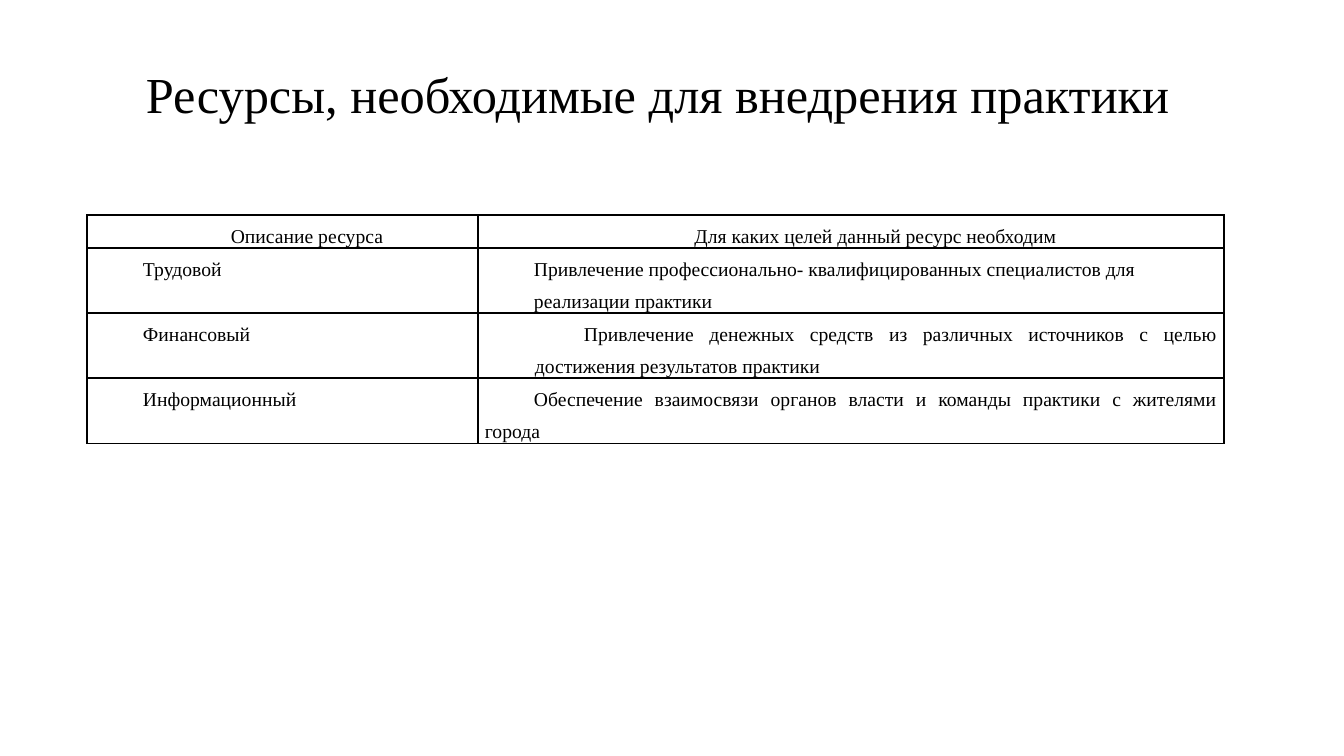
import pptx
import pptx.dml.color
import pptx.enum.text
import pptx.oxml
import pptx.oxml.ns
import pptx.util

EMU_PER_PX = 914400 / 100.8
FONT = "Times New Roman"
BLACK = pptx.dml.color.RGBColor(0, 0, 0)
ALIGN = pptx.enum.text.PP_ALIGN
ANCHOR = pptx.enum.text.MSO_ANCHOR

FIRST_LINE = 49
COLUMN_WIDTHS = (391, 746)
ROW_HEIGHTS = (33, 65, 65, 65)
HEADINGS = ("Описание ресурса", "Для каких целей данный ресурс необходим")
# Resource, its purpose, left margin of the purpose
RESOURCES = (
    ("Трудовой",
     "Привлечение профессионально- квалифицированных специалистов для\nреализации практики", 0),
    ("Финансовый",
     "Привлечение денежных средств из различных источников с целью достижения результатов практики", 50),
    ("Информационный",
     "Обеспечение взаимосвязи органов власти и команды практики с жителями города", 0),
)


def px(length):
    return pptx.util.Emu(round(length * EMU_PER_PX))


def write(frame, text, size=14, align=ALIGN.LEFT, spacing=1.5, margin=0):
    """Fill a text frame, one paragraph per line of text."""
    frame.word_wrap = True
    for number, line in enumerate(text.split("\n")):
        para = frame.add_paragraph() if number else frame.paragraphs[0]
        para.alignment = align
        para.line_spacing = spacing
        properties = para._p.get_or_add_pPr()
        properties.set("marL", str(px(margin)))
        properties.set("indent", str(px(FIRST_LINE)))
        span = para.add_run()
        span.text = line
        span.font.name = FONT
        span.font.size = pptx.util.Pt(size)
        span.font.color.rgb = BLACK


def outline(cell):
    """Draw a thin line on all four sides of a cell."""
    properties = cell._tc.get_or_add_tcPr()
    for side in ("lnL", "lnR", "lnT", "lnB"):
        properties.append(pptx.oxml.parse_xml(
            f'<a:{side} {pptx.oxml.ns.nsdecls("a")} w="{pptx.util.Pt(1)}">'
            f'<a:solidFill><a:srgbClr val="{BLACK}"/></a:solidFill></a:{side}>'))


def add_title(page, left, top, width, height):
    box = page.shapes.add_textbox(px(left), px(top), px(width), px(height))
    box.text_frame.vertical_anchor = ANCHOR.MIDDLE
    write(box.text_frame, "Ресурсы, необходимые для внедрения практики", size=36, spacing=1.0)


def add_resource_table(page, left, top):
    table = page.shapes.add_table(
        len(ROW_HEIGHTS), len(COLUMN_WIDTHS), px(left), px(top),
        px(sum(COLUMN_WIDTHS)), px(sum(ROW_HEIGHTS))).table
    table.first_row = table.horz_banding = False
    for column, width in zip(table.columns, COLUMN_WIDTHS):
        column.width = px(width)
    for row, height in zip(table.rows, ROW_HEIGHTS):
        row.height = px(height)

    # Plain outlined cells
    for cell in table.iter_cells():
        cell.margin_left = cell.margin_right = px(7)
        cell.margin_top = cell.margin_bottom = 0
        outline(cell)
        cell.fill.background()

    # Headings, then one row per resource
    for column, heading in enumerate(HEADINGS):
        write(table.cell(0, column).text_frame, heading, align=ALIGN.CENTER)
    for row, (resource, purpose, margin) in enumerate(RESOURCES, start=1):
        write(table.cell(row, 0).text_frame, resource)
        write(table.cell(row, 1).text_frame, purpose, align=ALIGN.JUSTIFY, margin=margin)


def main():
    deck = pptx.Presentation()
    deck.slide_width, deck.slide_height = px(1344), px(756)
    page = deck.slides.add_slide(deck.slide_layouts[6])
    add_resource_table(page, 87, 215)
    add_title(page, 87, 57, 1105, 72)
    deck.save("out.pptx")


if __name__ == "__main__":
    main()
